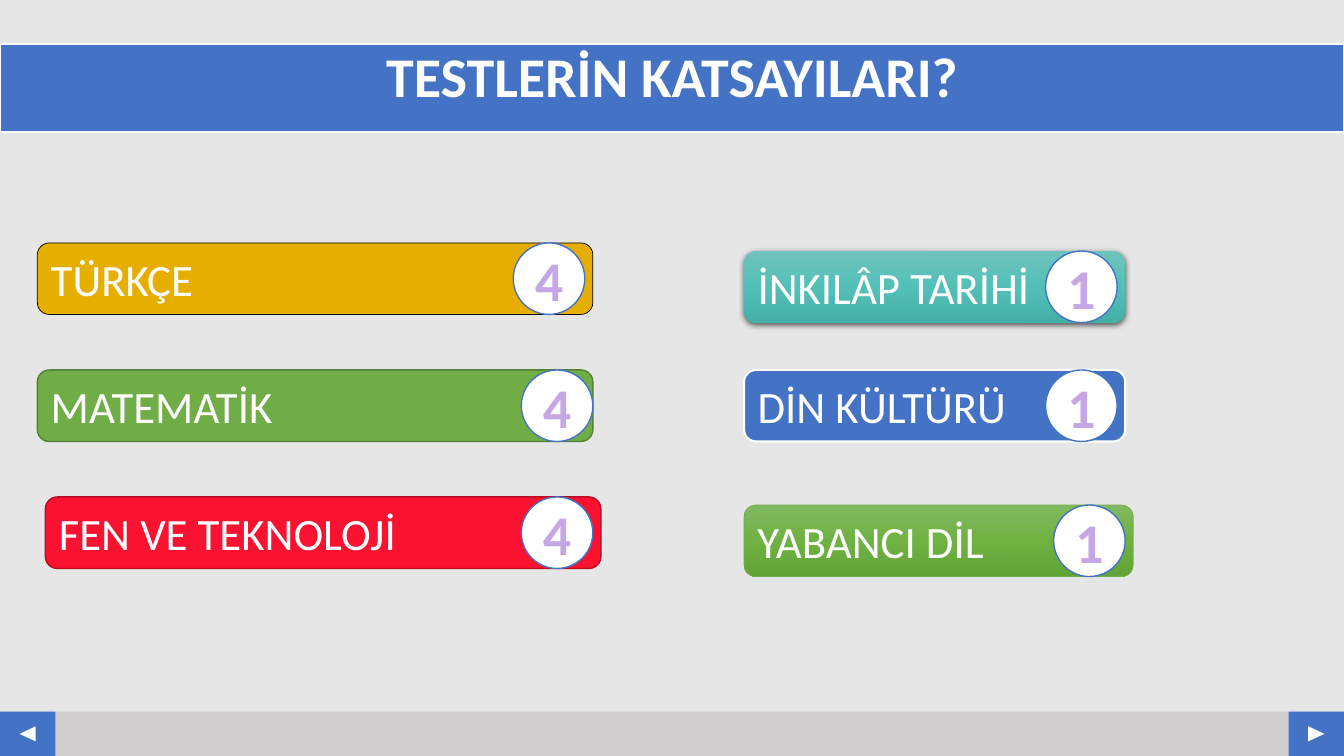
"""Builds the slide that lists the coefficient of each test."""
from copy import deepcopy

from lxml.etree import SubElement
from pptx import Presentation
from pptx.dml.color import RGBColor
from pptx.enum.shapes import MSO_SHAPE
from pptx.enum.text import MSO_ANCHOR, MSO_AUTO_SIZE, PP_ALIGN
from pptx.oxml.ns import qn
from pptx.util import Inches, Pt

BACKGROUND = RGBColor(0xE7, 0xE6, 0xE6)
FOOTER_GRAY = RGBColor(0xD0, 0xCE, 0xCE)
BLUE = RGBColor(0x44, 0x72, 0xC4)
WHITE = RGBColor(0xFF, 0xFF, 0xFF)
BLACK = RGBColor(0x00, 0x00, 0x00)
LILAC = RGBColor(0xC6, 0xA7, 0xE5)
GOLD = RGBColor(0xE6, 0xAF, 0x00)
GREEN = RGBColor(0x70, 0xAD, 0x47)
DARK_GREEN = RGBColor(0x53, 0x80, 0x35)
RED = RGBColor(0xFA, 0x12, 0x30)
DARK_RED = RGBColor(0xB9, 0x0D, 0x24)
TEAL_SHADES = [RGBColor(0x6F, 0xC3, 0xBC), RGBColor(0x53, 0xC0, 0xB8), RGBColor(0x44, 0xB0, 0xA8)]
GREEN_SHADES = [RGBColor(0x81, 0xB8, 0x61), RGBColor(0x6F, 0xB2, 0x42), RGBColor(0x62, 0xA3, 0x36)]

BAR_HEIGHT = 0.71
FOOTER_TOP, FOOTER_HEIGHT = 7.06, 0.44


def add_filled_shape(kind, left, top, width, height, colors, line_color=None, line_width=1):
    shape = slide.shapes.add_shape(kind, Inches(left), Inches(top), Inches(width), Inches(height))
    shape.shadow.inherit = False
    if len(colors) == 1:
        shape.fill.solid()
        shape.fill.fore_color.rgb = colors[0]
    else:
        shape.fill.gradient()
        shape.fill.gradient_angle = 270
        first_stop = shape._element.spPr.find(".//" + qn("a:gs"))
        first_stop.addnext(deepcopy(first_stop))
        for index, stop in enumerate(shape.fill.gradient_stops):
            stop.position = index / 2
            stop.color.rgb = colors[index]
    if line_color is None:
        shape.line.fill.background()
    else:
        shape.line.color.rgb = line_color
        shape.line.width = Pt(line_width)
    return shape


def write_text(shape, text, size, color, alignment, bold=False, anchor=MSO_ANCHOR.MIDDLE):
    shape.text_frame.word_wrap = True
    shape.text_frame.vertical_anchor = anchor
    paragraph = shape.text_frame.paragraphs[0]
    paragraph.alignment = alignment
    run = paragraph.add_run()
    run.text = text
    run.font.name = "Calibri"
    run.font.size = Pt(size)
    run.font.bold = bold
    run.font.color.rgb = color
    return paragraph


presentation = Presentation()
presentation.slide_width = Inches(13.33)
presentation.slide_height = Inches(7.5)
slide = presentation.slides.add_slide(presentation.slide_layouts[5])
slide.background.fill.solid()
slide.background.fill.fore_color.rgb = BACKGROUND

add_filled_shape(MSO_SHAPE.RECTANGLE, 0, FOOTER_TOP, 13.33, FOOTER_HEIGHT, [FOOTER_GRAY])
for button_left, rotation in [(0, 270), (12.78, 90)]:
    add_filled_shape(MSO_SHAPE.RECTANGLE, button_left, FOOTER_TOP, 0.55, FOOTER_HEIGHT, [BLUE])
    arrow = add_filled_shape(
        MSO_SHAPE.ISOSCELES_TRIANGLE, button_left + 0.2, 7.2, 0.15, 0.16, [WHITE])
    arrow.rotation = rotation

title = slide.shapes.title
title.left, title.top = Inches(0), Inches(0.44)
title.width, title.height = Inches(13.33), Inches(0.87)
title.fill.solid()
title.fill.fore_color.rgb = BLUE
title.line.color.rgb = WHITE
title.line.width = Pt(1.5)
title.text_frame.auto_size = MSO_AUTO_SIZE.NONE
title_paragraph = write_text(
    title, "TESTLERİN KATSAYILARI?", 40, WHITE, PP_ALIGN.CENTER, True, MSO_ANCHOR.TOP)
title_paragraph.line_spacing = 0.9

tests = [
    ("TÜRKÇE", "4", 0.37, 2.41, 5.51, 5.09, [GOLD], BLACK, 0.5),
    ("MATEMATİK", "4", 0.37, 3.67, 5.51, 5.17, [GREEN], DARK_GREEN, 1),
    ("FEN VE TEKNOLOJİ", "4", 0.45, 4.93, 5.51, 5.17, [RED], DARK_RED, 1),
    ("İNKILÂP TARİHİ", "1", 7.38, 2.49, 3.78, 10.37, TEAL_SHADES, None, 0),
    ("DİN KÜLTÜRÜ", "1", 7.38, 3.67, 3.78, 10.37, [BLUE], WHITE, 1.5),
    ("YABANCI DİL", "1", 7.38, 5.01, 3.86, 10.45, GREEN_SHADES, GREEN, 0.5),
]
for name, coefficient, left, top, width, circle_left, colors, line_color, line_width in tests:
    bar = add_filled_shape(
        MSO_SHAPE.FLOWCHART_ALTERNATE_PROCESS, left, top, width, BAR_HEIGHT,
        colors, line_color, line_width)
    write_text(bar, name, 32, WHITE, PP_ALIGN.LEFT)
    if colors is TEAL_SHADES:
        effects = bar._element.spPr.find(qn("a:effectLst"))
        shadow = SubElement(effects, qn("a:outerShdw"), blurRad=str(Pt(4.5)),
                            dist=str(Pt(1.5)), dir="5400000", algn="ctr", rotWithShape="0")
        shadow_color = SubElement(shadow, qn("a:srgbClr"), val=str(BLACK))
        SubElement(shadow_color, qn("a:alpha"), val="63000")
    circle = add_filled_shape(
        MSO_SHAPE.OVAL, circle_left, top, BAR_HEIGHT, BAR_HEIGHT, [WHITE], BLUE)
    write_text(circle, coefficient, 40, LILAC, PP_ALIGN.CENTER, True)

presentation.save("out.pptx")
